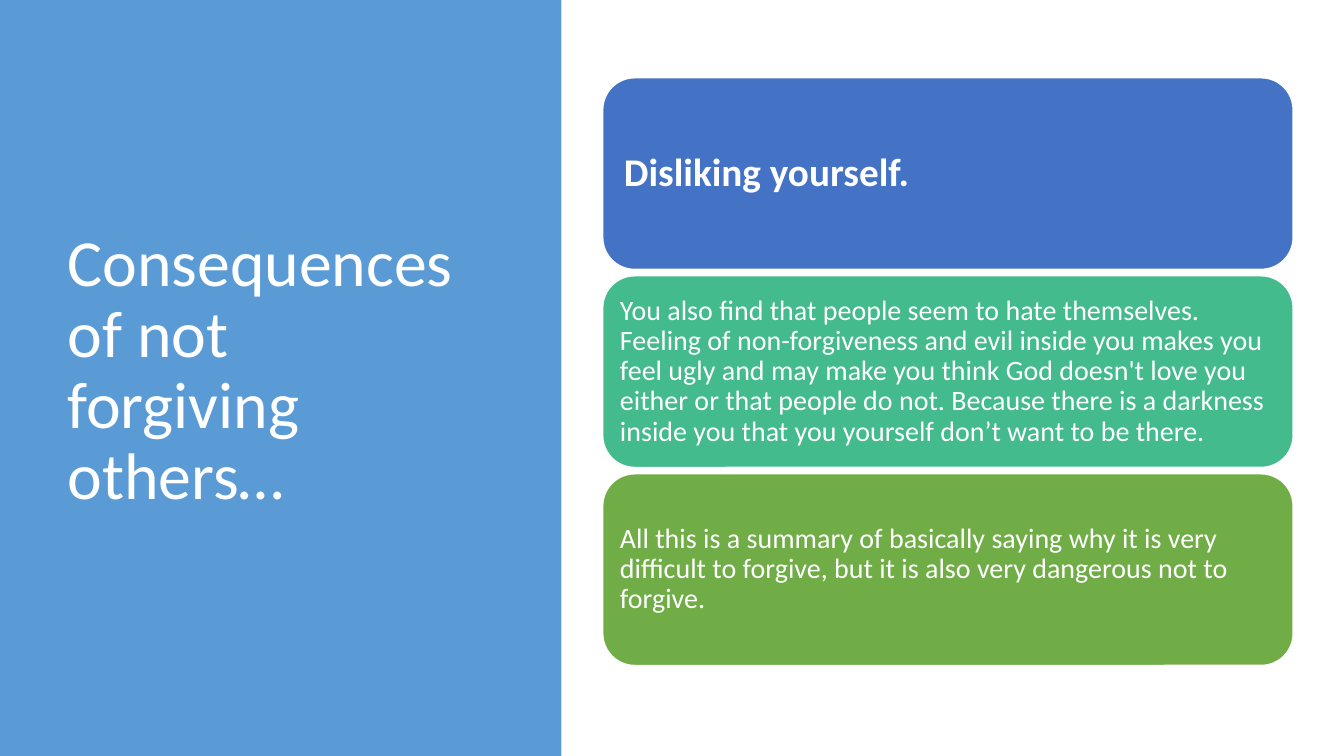
from pptx import Presentation
from pptx.dml.color import RGBColor
from pptx.enum.shapes import MSO_SHAPE
from pptx.enum.text import MSO_ANCHOR, MSO_AUTO_SIZE, PP_ALIGN
from pptx.util import Cm, Pt

WHITE = RGBColor(0xFF, 0xFF, 0xFF)
SKY = RGBColor(0x5B, 0x9B, 0xD5)
BLUE = RGBColor(0x44, 0x72, 0xC4)
TEAL = RGBColor(0x43, 0xBB, 0x8D)
GREEN = RGBColor(0x70, 0xAD, 0x47)

SLIDE_WIDTH, SLIDE_HEIGHT = 33.87, 19.05
PANEL_WIDTH = 14.15
CARD_LEFT, CARD_TOP = 15.19, 1.96
CARD_WIDTH, CARD_HEIGHT, CARD_GAP = 17.4, 4.83, 0.16

CARDS = [
    (BLUE, "Disliking yourself.", {"size": 28, "bold": True, "inset": 0.3}),
    (TEAL, "You also find that people seem to hate themselves. Feeling of "
           "non-forgiveness and evil inside you makes you feel ugly and may make "
           "you think God doesn't love you either or that people do not. Because "
           "there is a darkness inside you that you yourself don’t want to be "
           "there.", {"size": 20, "inset": 0.2}),
    (GREEN, "All this is a summary of basically saying why it is very difficult "
            "to forgive, but it is also very dangerous not to forgive.",
     {"size": 20, "inset": 0.2}),
]


def write_text(shape, text, size, bold=False, inset=0.25, color=WHITE, font="Calibri"):
    frame = shape.text_frame
    frame.word_wrap = True
    frame.auto_size = MSO_AUTO_SIZE.NONE
    frame.vertical_anchor = MSO_ANCHOR.MIDDLE
    frame.margin_left = frame.margin_right = Cm(inset)
    frame.margin_top = frame.margin_bottom = Cm(inset)
    para = frame.paragraphs[0]
    para.alignment = PP_ALIGN.LEFT
    para.line_spacing = 0.9
    span = para.add_run()
    span.text = text
    span.font.name = font
    span.font.size = Pt(size)
    span.font.bold = bold
    span.font.color.rgb = color


class SlideBuilder:
    def __init__(self, page):
        self.page = page

    def block(self, kind, left, top, width, height, fill):
        """Add a flat filled shape without an outline."""
        box = self.page.shapes.add_shape(kind, Cm(left), Cm(top), Cm(width), Cm(height))
        box.shadow.inherit = False
        box.fill.solid()
        box.fill.fore_color.rgb = fill
        box.line.fill.background()
        return box

    def title(self, text, left, top, width, height, **style):
        title = self.page.shapes.title
        title.left, title.top = Cm(left), Cm(top)
        title.width, title.height = Cm(width), Cm(height)
        write_text(title, text, **style)
        return title

    def card(self, top, fill, text, **style):
        card = self.block(MSO_SHAPE.ROUNDED_RECTANGLE, CARD_LEFT, top,
                          CARD_WIDTH, CARD_HEIGHT, fill)
        card.line.color.rgb = WHITE
        card.line.width = Pt(1)
        write_text(card, text, **style)


def main():
    deck = Presentation()
    deck.slide_width, deck.slide_height = Cm(SLIDE_WIDTH), Cm(SLIDE_HEIGHT)
    builder = SlideBuilder(deck.slides.add_slide(deck.slide_layouts[5]))

    panel = builder.block(MSO_SHAPE.RECTANGLE, 0, 0, PANEL_WIDTH, SLIDE_HEIGHT, SKY)
    title = builder.title("Consequences of not forgiving others…",
                          1.45, 1.73, 10.57, 15.29, size=47)
    title.element.addprevious(panel.element)  # keeps the panel behind the title

    for index, (fill, text, style) in enumerate(CARDS):
        builder.card(CARD_TOP + index * (CARD_HEIGHT + CARD_GAP), fill, text, **style)

    deck.save("out.pptx")


if __name__ == "__main__":
    main()
